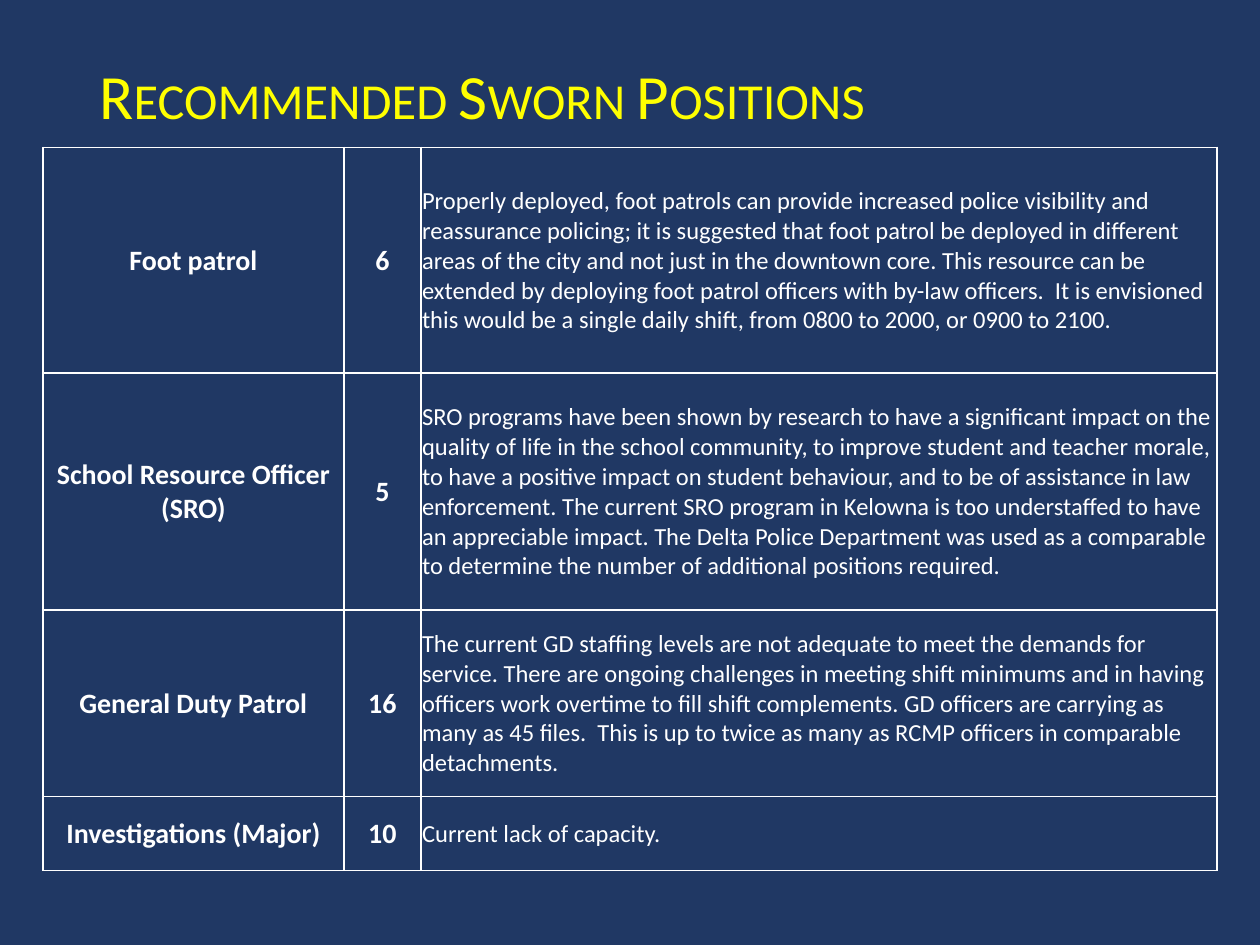
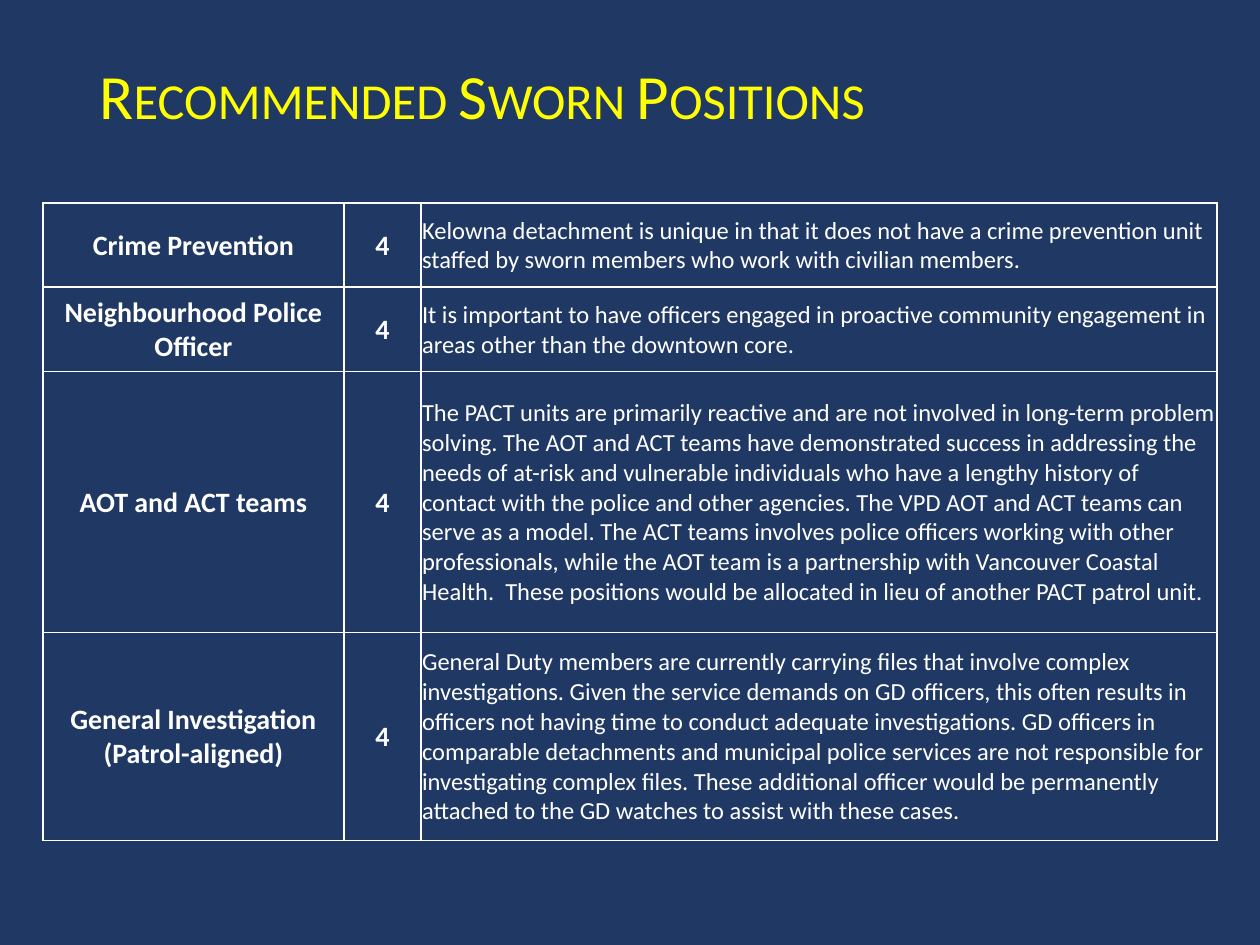
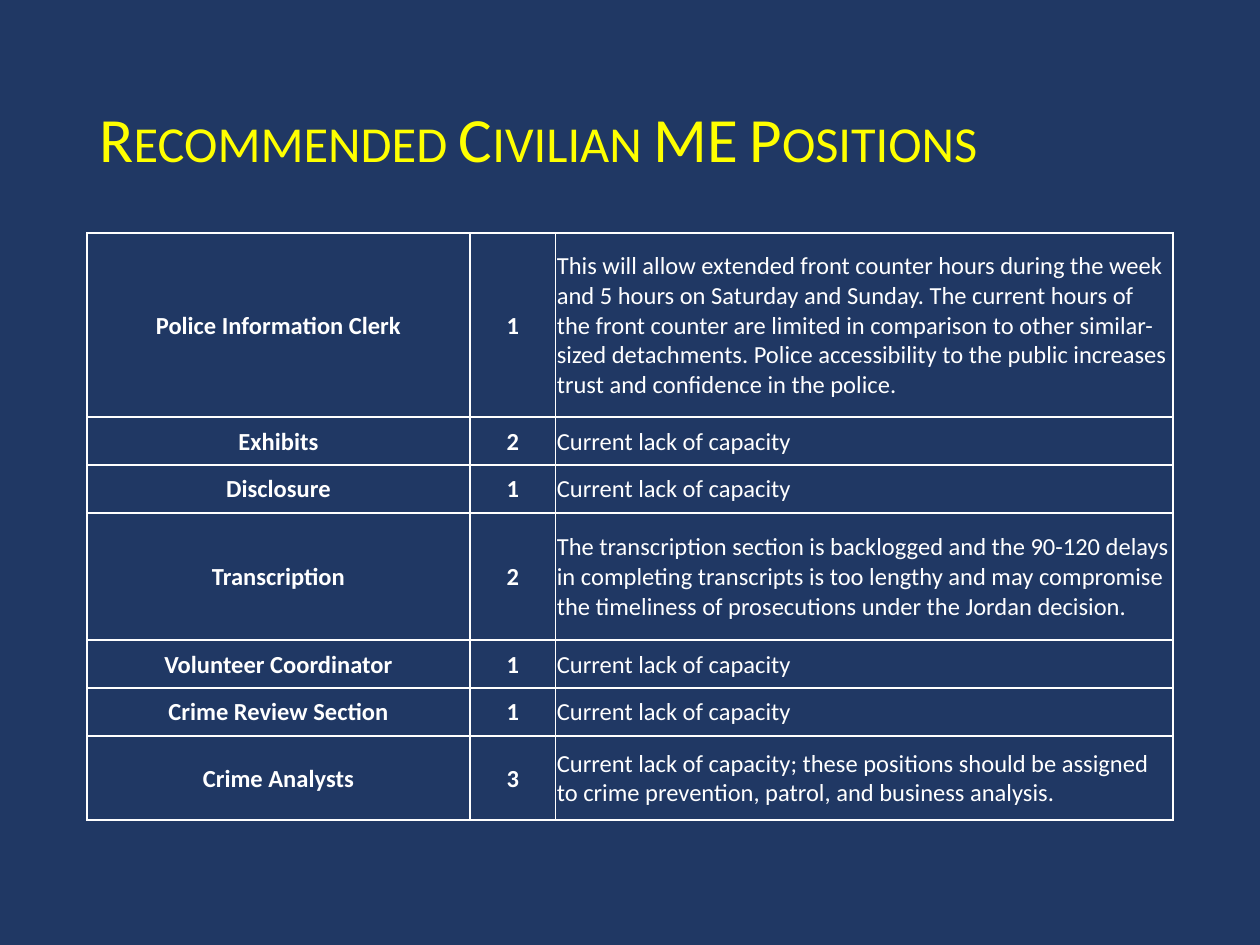
from dataclasses import dataclass

from lxml import etree
from pptx import Presentation
from pptx import util as u
from pptx.dml.color import RGBColor
from pptx.enum import text
from pptx.oxml.ns import qn


@dataclass(frozen=True)
class Theme:
    navy: str = "203864"
    yellow: str = "FFFF00"
    white: str = "FFFFFF"
    font: str = "Calibri"
    title: int = 36
    label: int = 16
    body: int = 14
    rule: int = 1


THEME = Theme()
LACK = "Current lack of capacity"
SWORN = "Recommended Sworn Positions"
WIDE = (2.39, 0.61, 6.32)
SLIM = (3.04, 0.68, 4.9)

# Each row: height, position, number of posts, reason
PATROL = [
    (1.79, "Foot patrol", "6",
     "Properly deployed, foot patrols can provide increased police visibility and "
     "reassurance policing; it is suggested that foot patrol be deployed in different "
     "areas of the city and not just in the downtown core. This resource can be "
     "extended by deploying foot patrol officers with by-law officers.  It is "
     "envisioned this would be a single daily shift, from 0800 to 2000, or 0900 to 2100."),
    (1.88, "School Resource Officer (SRO)", "5",
     "SRO programs have been shown by research to have a significant impact on the "
     "quality of life in the school community, to improve student and teacher morale, "
     "to have a positive impact on student behaviour, and to be of assistance in law "
     "enforcement. The current SRO program in Kelowna is too understaffed to have an "
     "appreciable impact. The Delta Police Department was used as a comparable to "
     "determine the number of additional positions required."),
    (1.48, "General Duty Patrol", "16",
     "The current GD staffing levels are not adequate to meet the demands for service. "
     "There are ongoing challenges in meeting shift minimums and in having officers "
     "work overtime to fill shift complements. GD officers are carrying as many as "
     "45 files.  This is up to twice as many as RCMP officers in comparable detachments."),
    (0.59, "Investigations (Major)", "10", LACK + "."),
]
TEAMS = [
    (0.67, "Crime Prevention", "4",
     "Kelowna detachment is unique in that it does not have a crime prevention unit "
     "staffed by sworn members who work with civilian members."),
    (0.67, "Neighbourhood Police Officer", "4",
     "It is important to have officers engaged in proactive community engagement in "
     "areas other than the downtown core."),
    (2.07, "AOT and ACT teams", "4",
     "The PACT units are primarily reactive and are not involved in long-term problem "
     "solving. The AOT and ACT teams have demonstrated success in addressing the needs "
     "of at-risk and vulnerable individuals who have a lengthy history of contact with "
     "the police and other agencies. The VPD AOT and ACT teams can serve as a model. "
     "The ACT teams involves police officers working with other professionals, while "
     "the AOT team is a partnership with Vancouver Coastal Health.  These positions "
     "would be allocated in lieu of another PACT patrol unit."),
    (1.65, "General Investigation\n(Patrol-aligned)", "4",
     "General Duty members are currently carrying files that involve complex "
     "investigations. Given the service demands on GD officers, this often results in "
     "officers not having time to conduct adequate investigations. GD officers in "
     "comparable detachments and municipal police services are not responsible for "
     "investigating complex files. These additional officer would be permanently "
     "attached to the GD watches to assist with these cases."),
]
CIVIL = [
    (1.46, "Police Information Clerk", "1",
     "This will allow extended front counter hours during the week and 5 hours on "
     "Saturday and Sunday. The current hours of the front counter are limited in "
     "comparison to other similar-sized detachments. Police accessibility to the "
     "public increases trust and confidence in the police."),
    (0.38, "Exhibits", "2", LACK),
    (0.38, "Disclosure", "1", LACK),
    (1.01, "Transcription", "2",
     "The transcription section is backlogged and the 90-120 delays in completing "
     "transcripts is too lengthy and may compromise the timeliness of prosecutions "
     "under the Jordan decision."),
    (0.38, "Volunteer Coordinator", "1", LACK),
    (0.38, "Crime Review Section", "1", LACK),
    (0.67, "Crime Analysts", "3",
     LACK + "; these positions should be assigned to crime prevention, patrol, and "
     "business analysis."),
]


def style(para, size, color, bold=False):
    for run in para.runs:
        font = run.font
        font.name, font.size, font.bold = THEME.font, u.Pt(size), bold
        font.color.rgb = RGBColor.from_string(color)


def add_title(slide, words, height):
    title = slide.shapes.title
    title.left, title.top = u.Inches(0.69), u.Inches(0.4)
    title.width, title.height = u.Inches(8.62), u.Inches(height)
    frame = title.text_frame
    frame.text = words
    frame.auto_size = text.MSO_AUTO_SIZE.NONE
    frame.vertical_anchor = text.MSO_ANCHOR.MIDDLE
    para = frame.paragraphs[0]
    para.alignment = text.PP_ALIGN.LEFT
    para.line_spacing = 0.9
    style(para, THEME.title, THEME.yellow)
    para.runs[0].font._element.set("cap", "small")


def add_rules(cell):
    """Draw a line on all four sides of the cell."""
    props = cell._tc.get_or_add_tcPr()
    for side in ("lnL", "lnR", "lnT", "lnB"):
        line = etree.SubElement(props, qn("a:" + side), w=str(u.Pt(THEME.rule)))
        fill = etree.SubElement(line, qn("a:solidFill"))
        etree.SubElement(fill, qn("a:srgbClr"), val=THEME.white)


def fill_cell(cell, words, size, head):
    add_rules(cell)
    cell.fill.background()
    cell.margin_left = cell.margin_right = cell.margin_top = u.Inches(0.01)
    cell.margin_bottom = 0
    cell.vertical_anchor = text.MSO_ANCHOR.MIDDLE
    para = cell.text_frame.paragraphs[0]
    para.text = words
    para.alignment = text.PP_ALIGN.CENTER if head else text.PP_ALIGN.LEFT
    style(para, size, THEME.white, head)


def add_grid(slide, left, top, cols, rows, size):
    """Add the table of posts; size is that of the label and number columns."""
    high = sum(row[0] for row in rows)
    grid = slide.shapes.add_table(
        len(rows), len(cols), u.Inches(left), u.Inches(top),
        u.Inches(sum(cols)), u.Inches(high)).table
    grid.first_row = grid.horz_banding = False
    for col, width in zip(grid.columns, cols):
        col.width = u.Inches(width)
    for r, (height, *words) in enumerate(rows):
        grid.rows[r].height = u.Inches(height)
        for c, word in enumerate(words):
            head = c < 2
            fill_cell(grid.cell(r, c), word, size if head else THEME.body, head)


def main():
    deck = Presentation()
    deck.slide_width, deck.slide_height = u.Inches(10), u.Inches(7.5)
    back = deck.slide_master.background.fill
    back.solid()
    back.fore_color.rgb = RGBColor.from_string(THEME.navy)
    pages = [
        (SWORN, 0.77, 0.34, 1.17, WIDE, PATROL, THEME.label),
        (SWORN, 0.77, 0.34, 1.61, WIDE, TEAMS, THEME.label),
        ("Recommended Civilian ME Positions", 1.45, 0.69, 1.85, SLIM, CIVIL, THEME.body),
    ]
    for words, height, *grid in pages:
        slide = deck.slides.add_slide(deck.slide_layouts[5])
        add_title(slide, words, height)
        add_grid(slide, *grid)
    deck.save("out.pptx")


if __name__ == "__main__":
    main()
